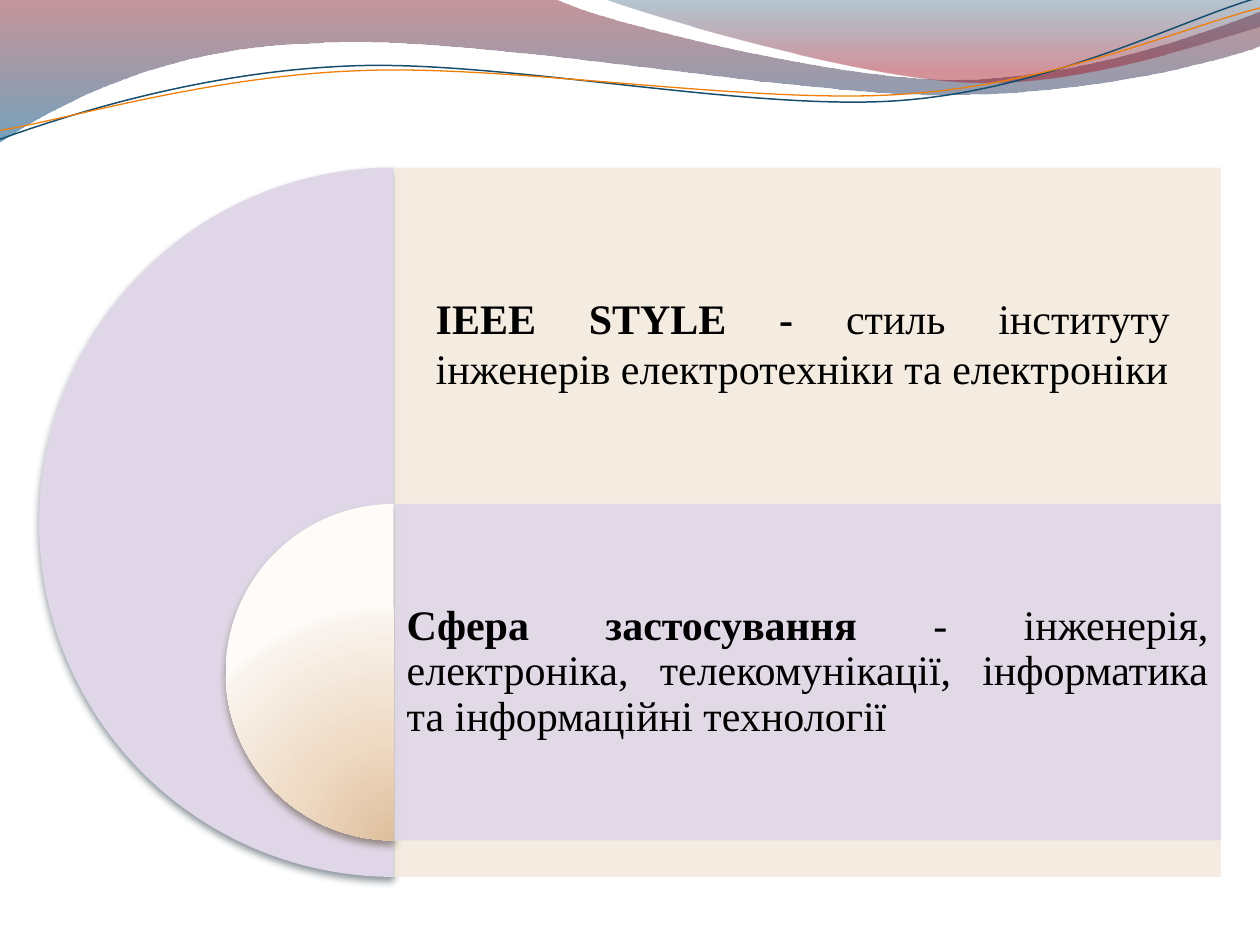
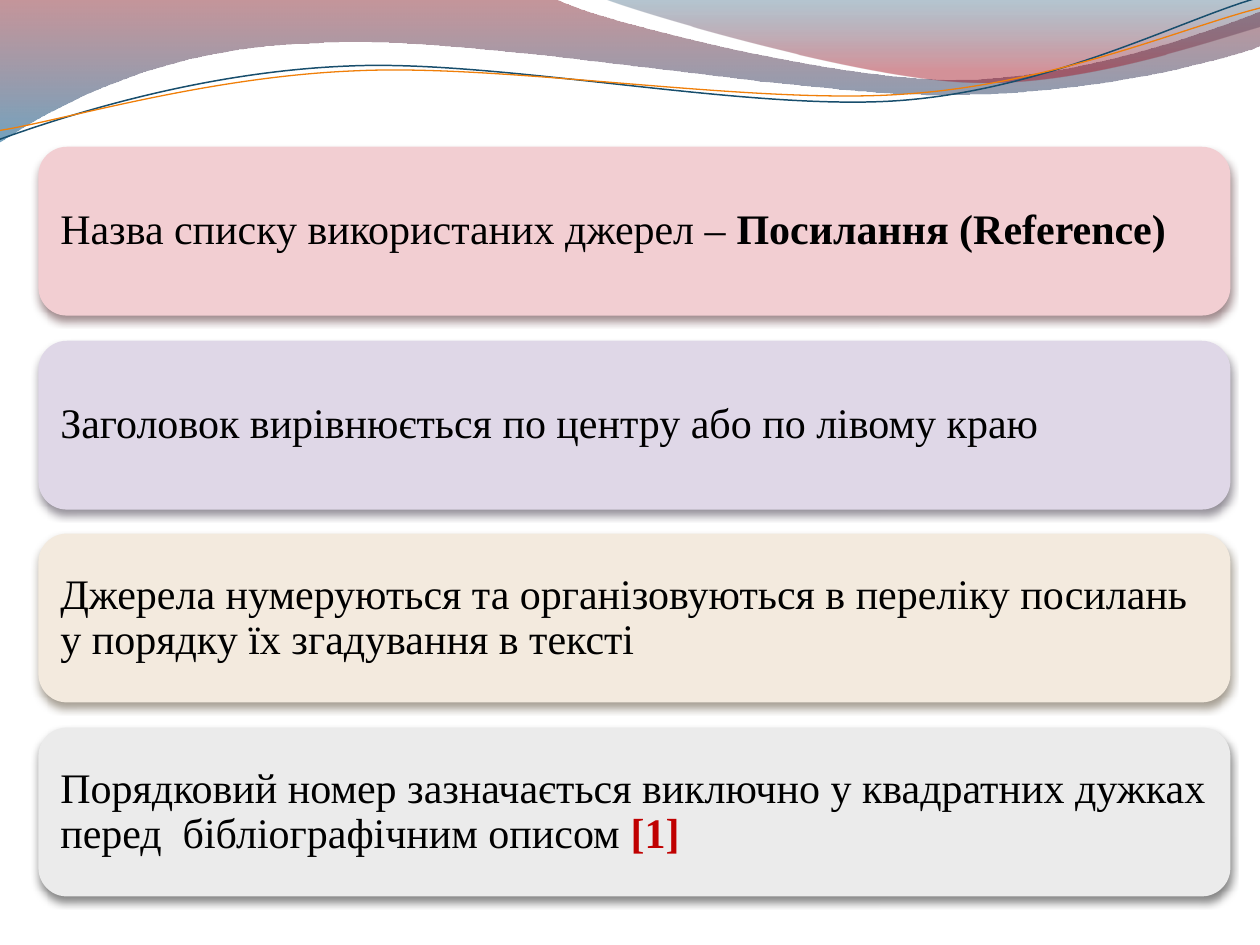
from lxml import etree
from pptx import Presentation
from pptx.dml.color import RGBColor
from pptx.enum.shapes import MSO_SHAPE
from pptx.enum.text import MSO_ANCHOR, MSO_AUTO_SIZE, PP_ALIGN
from pptx.oxml.ns import qn
from pptx.util import Pt

PX = 9144  # EMU in one px, 100 px to the inch
RECT, ROUND_RECT, PIE = MSO_SHAPE.RECTANGLE, MSO_SHAPE.ROUNDED_RECTANGLE, MSO_SHAPE.PIE
MIDDLE, TOP = MSO_ANCHOR.MIDDLE, MSO_ANCHOR.TOP
LEFT, JUSTIFY = PP_ALIGN.LEFT, PP_ALIGN.JUSTIFY
GROW = MSO_AUTO_SIZE.SHAPE_TO_FIT_TEXT

FONT = "Times New Roman"
BLACK, RED = "000000", "C00000"
ROSE, LILAC, CREAM, GREY = "F2CED2", "DFD7E7", "F3EADE", "EBEBEB"
SAND_SHADOW = "45361E"

# An outline is a start point, then lines (x, y) and curves (x1, y1, x2, y2, x, y).
LEFT_WAVE = [(0, 0), (440, -1), (476, 17, 664, 63, 758, 63), (853, 63, 958, 26, 1000, 9),
             (1001, 36), (983, 44, 870, 76, 746, 75), (622, 75, 382, 28, 257, 34),
             (129, 36, 46, 83, -1, 113), (0, 0)]
RIGHT_WAVE = [(479, -1), (509, 11, 682, 62, 769, 65), (856, 69, 961, 32, 1000, 21),
              (1000, 0), (479, -1)]
# The two lines are level here and tilted once drawn.
TILT = 357.3
BLUE_LINE = [(-2, 87), (47, 72, 158, 41, 277, 42), (396, 42, 591, 93, 712, 90),
             (832, 87, 940, 36, 1000, 22)]
ORANGE_LINE = [(-2, 80), (46, 75, 164, 45, 283, 46), (403, 46, 596, 88, 716, 85),
               (835, 83, 942, 42, 1002, 30)]


def rgb(color):
    return RGBColor.from_string(color)


def add_color(parent, color, alpha=100):
    clr = etree.SubElement(parent, qn("a:srgbClr"), val=color)
    if alpha < 100:
        etree.SubElement(clr, qn("a:alpha"), val=str(alpha * 1000))


def fill_solid(shape, color, alpha=100):
    shape.fill.solid()
    shape.fill.fore_color.rgb = rgb(color)
    if alpha < 100:
        clr = shape.element.spPr.find(".//" + qn("a:srgbClr"))
        etree.SubElement(clr, qn("a:alpha"), val=str(alpha * 1000))


def fill_gradient(shape, stops, circle=None):
    """Fill downwards, or around the circle's (left, top, right, bottom) percentages."""
    shape.fill.solid()
    sp_pr = shape.element.spPr
    grad = etree.Element(qn("a:gradFill"), rotWithShape="1")
    stop_list = etree.SubElement(grad, qn("a:gsLst"))
    for pos, *color in stops:
        add_color(etree.SubElement(stop_list, qn("a:gs"), pos=str(pos * 1000)), *color)
    if circle:
        round_fill = etree.SubElement(grad, qn("a:path"), {"path": "circle"})
        sides = {side: str(value * 1000) for side, value in zip("ltrb", circle)}
        etree.SubElement(round_fill, qn("a:fillToRect"), sides)
    else:
        etree.SubElement(grad, qn("a:lin"), ang="5400000", scaled="1")
    sp_pr.replace(sp_pr.find(qn("a:solidFill")), grad)


def add_shadow(shape, color):
    effects = shape.element.spPr.find(qn("a:effectLst"))
    outer = etree.SubElement(effects, qn("a:outerShdw"), blurRad=str(Pt(4.5)),
                             dist=str(Pt(3)), dir="5400000", rotWithShape="0")
    add_color(outer, color, 48)


def set_line(shape, color=None, width=0.75):
    if color:
        shape.line.color.rgb = rgb(color)
        shape.line.width = Pt(width)
    else:
        shape.line.fill.background()


def bend(shape, outline):
    """Join each three straight steps that stand for a curve into one Bézier curve."""
    steps = iter(shape.element.spPr.findall(".//" + qn("a:lnTo")))
    for seg in outline[1:]:
        step = next(steps)
        if len(seg) == 6:
            step_parent = step.getparent()
            curve = etree.Element(qn("a:cubicBezTo"))
            step_parent.replace(step, curve)
            curve.append(step[0])
            for _ in range(2):
                extra = next(steps)
                curve.append(extra[0])
                step_parent.remove(extra)


def add_outline(shapes, outline, close):
    points = [(seg[i] * PX, seg[i + 1] * PX)
              for seg in outline for i in range(0, len(seg), 2)]
    builder = shapes.build_freeform(*points[0])
    builder.add_line_segments(points[1:], close=close)
    shape = builder.convert_to_shape()
    bend(shape, outline)
    shape.shadow.inherit = False
    return shape


def add_wave(shapes, outline, stops):
    shape = add_outline(shapes, outline, True)
    fill_gradient(shape, stops)
    set_line(shape)
    return shape


def add_tilted_line(shapes, outline, color, width):
    shape = add_outline(shapes, outline, False)
    shape.fill.background()
    set_line(shape, color, width)
    shape.rotation = TILT


def put_waves_on_master(s, master):
    """Draw the header waves and hand them to the master that the slides share."""
    left = add_wave(s.shapes, LEFT_WAVE, [(0, "7E1621", 45), (100, "005689", 55)])
    right = add_wave(s.shapes, RIGHT_WAVE, [(0, "094467", 30), (80, "A10F1F", 45)])
    lines = s.shapes.add_group_shape()
    add_tilted_line(lines.shapes, BLUE_LINE, "184E6D", 0.85)
    add_tilted_line(lines.shapes, ORANGE_LINE, "F07F09", 0.75)
    tree = master.shapes.element
    for i, shape in enumerate((left, right, lines)):
        tree.insert(2 + i, shape.element)
        for j, name in enumerate(shape.element.iter(qn("p:cNvPr"))):
            name.set("id", str(20 + 10 * i + j))


def add_box(shapes, kind, x, y, w, h, line=None, shadow=None):
    shape = shapes.add_shape(kind, x * PX, y * PX, w * PX, h * PX)
    shape.shadow.inherit = False
    set_line(shape, line)
    if shadow:
        add_shadow(shape, shadow)
    return shape


def add_half_disc(shapes, x, y, size, shadow):
    disc = add_box(shapes, PIE, x, y, size, size, shadow=shadow)
    disc.adjustments[0], disc.adjustments[1] = 54, 162
    return disc


def add_text(shapes, x, y, w, h, *runs, align=LEFT, anchor=MIDDLE, inset=10, spacing=0.9):
    """Add one paragraph of (text, bold) or (text, bold, color) runs."""
    box = shapes.add_textbox(x * PX, y * PX, w * PX, h * PX)
    tf = box.text_frame
    tf.word_wrap = True
    tf.vertical_anchor = anchor
    tf.margin_left = tf.margin_right = 10 * PX
    tf.margin_top = tf.margin_bottom = inset * PX
    p = tf.paragraphs[0]
    p.alignment = align
    if spacing:
        p.line_spacing = spacing
    for text, bold, *color in runs:
        r = p.add_run()
        r.text = text
        r.font.name = FONT
        r.font.size = Pt(24)
        r.font.bold = bold
        r.font.color.rgb = rgb(color[0] if color else BLACK)
    return box


def build_style_slide(s):
    diagram = s.shapes.add_group_shape().shapes
    panel, scope = (313, 133, 656, 563), (313, 400, 656, 267)
    fill_solid(add_half_disc(diagram, 31, 133, 563, "091F2C"), LILAC)
    fill_solid(add_box(diagram, RECT, *panel), CREAM, 90)
    fill_gradient(add_half_disc(diagram, 179, 400, 267, SAND_SHADOW),
                  [(0, "DEBF9C"), (43, "EFDAC4"), (93, "F9F3ED"), (100, "FEFBF8")],
                  circle=(50, 130, 50, -30))
    fill_solid(add_box(diagram, RECT, *scope), LILAC, 90)
    add_text(diagram, *scope, ("Сфера застосування ", True),
             ("- інженерія, електроніка, телекомунікації, інформатика та інформаційні технології",
              False), align=JUSTIFY)
    style = add_text(s.shapes, 336, 227, 602, 91, ("IEEE STYLE - ", True),
                     ("стиль інституту інженерів електротехніки та електроніки", False),
                     align=JUSTIFY, anchor=TOP, inset=5, spacing=None)
    style.text_frame.auto_size = GROW


def build_rules_slide(s):
    rules = [
        (ROSE, "390D12", [("Назва списку використаних джерел – ", False),
                          ("Посилання (Reference)", True)]),
        (LILAC, "22192B", [("Заголовок вирівнюється по центру або по лівому краю", False)]),
        (CREAM, SAND_SHADOW, [("Джерела нумеруються та організовуються в переліку посилань "
                               "у порядку їх згадування в тексті", False)]),
        (GREY, BLACK, [("Порядковий номер зазначається виключно у квадратних дужках "
                        "перед  бібліографічним описом ", False), ("[1]", True, RED)]),
    ]
    first, last, pad = 117, 578, 7
    cards = s.shapes.add_group_shape().shapes
    for i, (color, shadow, runs) in enumerate(rules):
        y = first + round(i * (last - first) / (len(rules) - 1))
        card = add_box(cards, ROUND_RECT, 31, y, 945, 133, line=color, shadow=shadow)
        fill_solid(card, color)
        add_text(cards, 31 + pad, y + pad, 945 - 2 * pad, 133 - 2 * pad, *runs)


def main():
    prs = Presentation()
    prs.slide_width, prs.slide_height = 1000 * PX, 750 * PX
    blank = prs.slide_layouts[6]
    style_slide, rules_slide = (prs.slides.add_slide(blank) for _ in range(2))
    put_waves_on_master(style_slide, prs.slide_master)
    build_style_slide(style_slide)
    build_rules_slide(rules_slide)
    prs.save("out.pptx")


if __name__ == "__main__":
    main()
